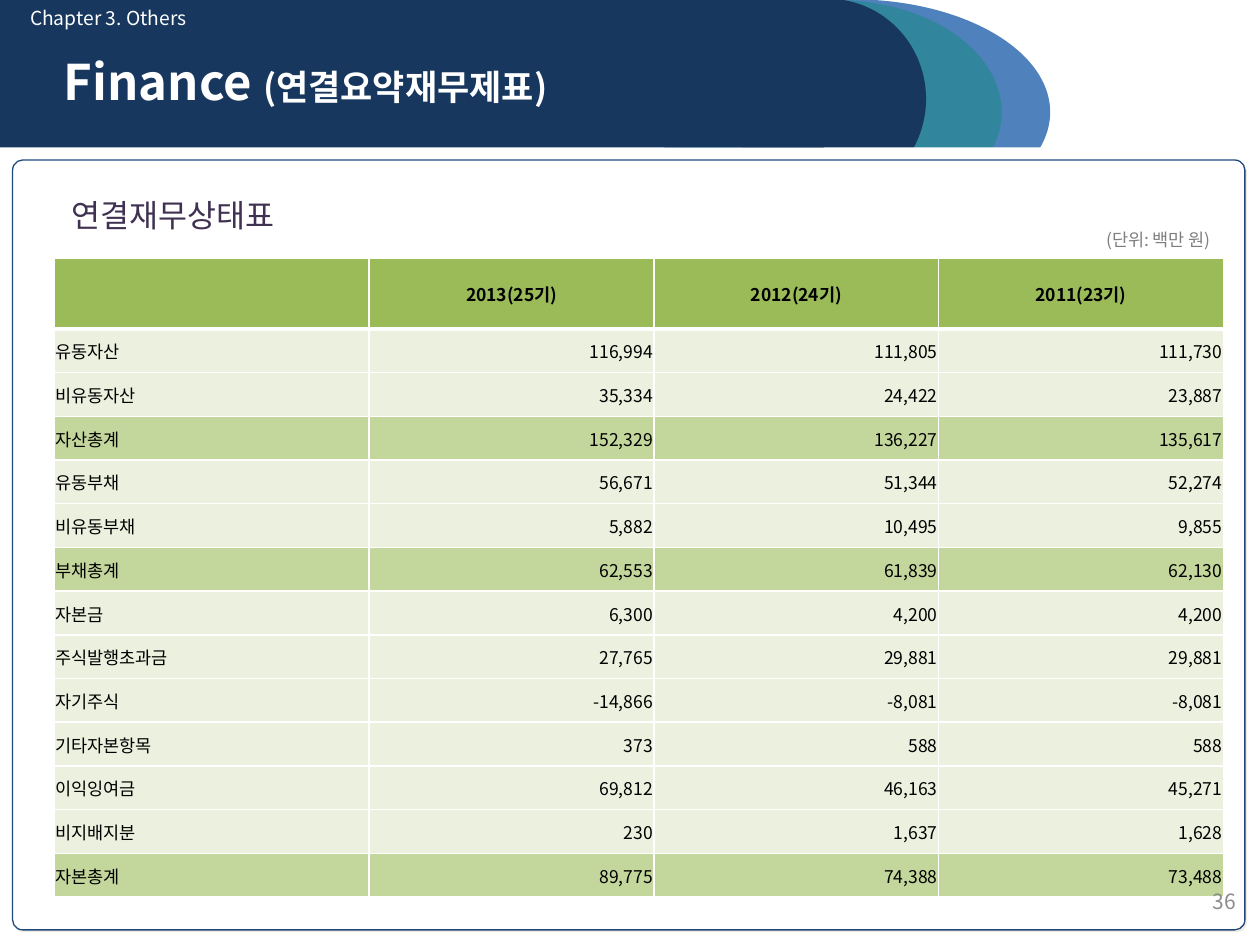
from dataclasses import dataclass

from lxml import etree
from pptx import Presentation
from pptx.dml.color import RGBColor
from pptx.enum.shapes import MSO_SHAPE
from pptx.enum.text import MSO_ANCHOR, PP_ALIGN
from pptx.oxml import parse_xml
from pptx.oxml.ns import qn
from pptx.util import Inches, Pt

OVAL, RECT, ROUNDED = MSO_SHAPE.OVAL, MSO_SHAPE.RECTANGLE, MSO_SHAPE.ROUNDED_RECTANGLE
LEFT, CENTER, RIGHT = PP_ALIGN.LEFT, PP_ALIGN.CENTER, PP_ALIGN.RIGHT
TOP, MIDDLE, BOTTOM = MSO_ANCHOR.TOP, MSO_ANCHOR.MIDDLE, MSO_ANCHOR.BOTTOM
DRAWING = "http://schemas.openxmlformats.org/drawingml/2006/main"


@dataclass(frozen=True)
class Theme:
    font: str = "Noto Sans CJK KR"
    white: str = "FFFFFF"
    black: str = "000000"
    navy: str = "17375E"
    teal: str = "31859C"
    blue: str = "4F81BD"
    outline: str = "1F497D"
    shade: str = "EEECE1"
    heading: str = "403152"
    unit: str = "7F7F7F"
    number: str = "8C8C8C"
    header: str = "9BBB59"
    total: str = "C3D69B"
    row: str = "EBF1DE"
    title_size: int = 28
    subtitle_size: int = 20
    heading_size: int = 18
    number_size: int = 12
    chapter_size: int = 11
    table_size: int = 10


THEME = Theme()


def write_text(frame, text, size, color, bold=False, align=LEFT):
    """Append a span to the last paragraph of a text frame."""
    para = frame.paragraphs[-1]
    para.alignment = align
    span = para.add_run()
    span.text = text
    span.font.size = Pt(size)
    span.font.bold = bold
    span.font.color.rgb = RGBColor.from_string(color)
    span.font.name = THEME.font
    east_asian = etree.SubElement(span.font._element, qn("a:ea"))
    east_asian.set("typeface", THEME.font)


deck = Presentation()
deck.slide_width, deck.slide_height = Inches(10), Inches(7.5)
page = deck.slides.add_slide(deck.slide_layouts[6])

# Banner and content panel, back to front
shapes = [
    (OVAL, 5.2, 0, 3.13, 1.78, THEME.blue, THEME.blue),
    (OVAL, 5.31, 0, 2.64, 1.78, THEME.teal, None),
    (OVAL, 5.79, -0.01, 1.56, 1.59, THEME.navy, None),
    (RECT, 0, 1.17, 10, 0.93, THEME.white, None),
    (RECT, 0, 0, 6.54, 1.17, THEME.navy, None),
    (ROUNDED, 0.1, 1.27, 9.78, 6.11, THEME.white, THEME.outline),
]
for kind, left, top, width, height, fill, line in shapes:
    shape = page.shapes.add_shape(
        kind, Inches(left), Inches(top), Inches(width), Inches(height))
    shape.shadow.inherit = False
    shape.fill.solid()
    shape.fill.fore_color.rgb = RGBColor.from_string(fill)
    if line:
        shape.line.color.rgb = RGBColor.from_string(line)
        shape.line.width = Pt(0.75)
    else:
        shape.line.fill.background()

panel = shape
panel.adjustments[0] = 0.013
panel._element.spPr.find(qn("a:effectLst")).append(parse_xml(
    f'<a:outerShdw xmlns:a="{DRAWING}" dist="{Pt(1.4)}" dir="2700000">'
    f'<a:srgbClr val="{THEME.shade}"/></a:outerShdw>'))

# Balance sheet
UNIT = "(단위: 백만 원)"
HEADERS = ["", "2013(25기)", "2012(24기)", "2011(23기)"]
BALANCES = [
    ["유동자산", "116,994", "111,805", "111,730"],
    ["비유동자산", "35,334", "24,422", "23,887"],
    ["자산총계", "152,329", "136,227", "135,617"],
    ["유동부채", "56,671", "51,344", "52,274"],
    ["비유동부채", "5,882", "10,495", "9,855"],
    ["부채총계", "62,553", "61,839", "62,130"],
    ["자본금", "6,300", "4,200", "4,200"],
    ["주식발행초과금", "27,765", "29,881", "29,881"],
    ["자기주식", "-14,866", "-8,081", "-8,081"],
    ["기타자본항목", "373", "588", "588"],
    ["이익잉여금", "69,812", "46,163", "45,271"],
    ["비지배지분", "230", "1,637", "1,628"],
    ["자본총계", "89,775", "74,388", "73,488"],
]
rows = [[UNIT, "", "", ""], HEADERS] + BALANCES
table = page.shapes.add_table(
    len(rows), len(HEADERS), Inches(0.43), Inches(1.5), Inches(9.29), Inches(5.61)).table
table.first_row = table.horz_banding = False
for column, width in zip(table.columns, [2.5, 2.26, 2.26, 2.26]):
    column.width = Inches(width)
for row, height in zip(table.rows, [0.55, 0.56] + [0.347] * len(BALANCES)):
    row.height = Inches(height)
table.cell(0, 0).merge(table.cell(0, 3))

for row_index, values in enumerate(rows):
    is_unit, is_header = row_index == 0, row_index == 1
    for column_index, value in enumerate(values):
        cell = table.cell(row_index, column_index)

        # Borders: the rule under the header is heavier
        heavy_side = {1: "B", 2: "T"}.get(row_index)
        for side in "LRTB":
            weight = Pt(3 if side == heavy_side else 1)
            cell._tc.get_or_add_tcPr().append(parse_xml(
                f'<a:ln{side} xmlns:a="{DRAWING}" w="{weight}"><a:solidFill>'
                f'<a:srgbClr val="{THEME.white}"/></a:solidFill></a:ln{side}>'))

        # Fill and insets
        if is_unit:
            cell.fill.background()
            cell.vertical_anchor = BOTTOM
        else:
            fill = THEME.row
            if is_header:
                fill = THEME.header
            elif values[0].endswith("총계"):
                fill = THEME.total
            cell.fill.solid()
            cell.fill.fore_color.rgb = RGBColor.from_string(fill)
            cell.vertical_anchor = MIDDLE
            cell.margin_left = cell.margin_right = cell.margin_top = Inches(0.01)
            cell.margin_bottom = 0

        if value:
            align = CENTER if is_header else RIGHT if is_unit or column_index else LEFT
            write_text(cell.text_frame, value, THEME.table_size,
                       THEME.unit if is_unit else THEME.black,
                       bold=is_header, align=align)

# Headings and page number
labels = [
    (0.47, 1.51, 1.97, 0.4, TOP, LEFT, False,
     [("연결재무상태표", THEME.heading_size, THEME.heading)]),
    (7.58, 6.95, 2.33, 0.4, MIDDLE, RIGHT, False,
     [("36", THEME.number_size, THEME.number)]),
    (0.41, 0.36, 7.74, 0.91, TOP, LEFT, True,
     [("Finance ", THEME.title_size, THEME.white),
      ("(연결요약재무제표)", THEME.subtitle_size, THEME.white)]),
    (0.14, 0, 3.6, 0.29, TOP, LEFT, False,
     [("Chapter 3. Others", THEME.chapter_size, THEME.white)]),
]
for left, top, width, height, anchor, align, bold, spans in labels:
    box = page.shapes.add_textbox(Inches(left), Inches(top), Inches(width), Inches(height))
    box.text_frame.word_wrap = True
    box.text_frame.vertical_anchor = anchor
    for text, size, color in spans:
        write_text(box.text_frame, text, size, color, bold=bold, align=align)

deck.save("out.pptx")
